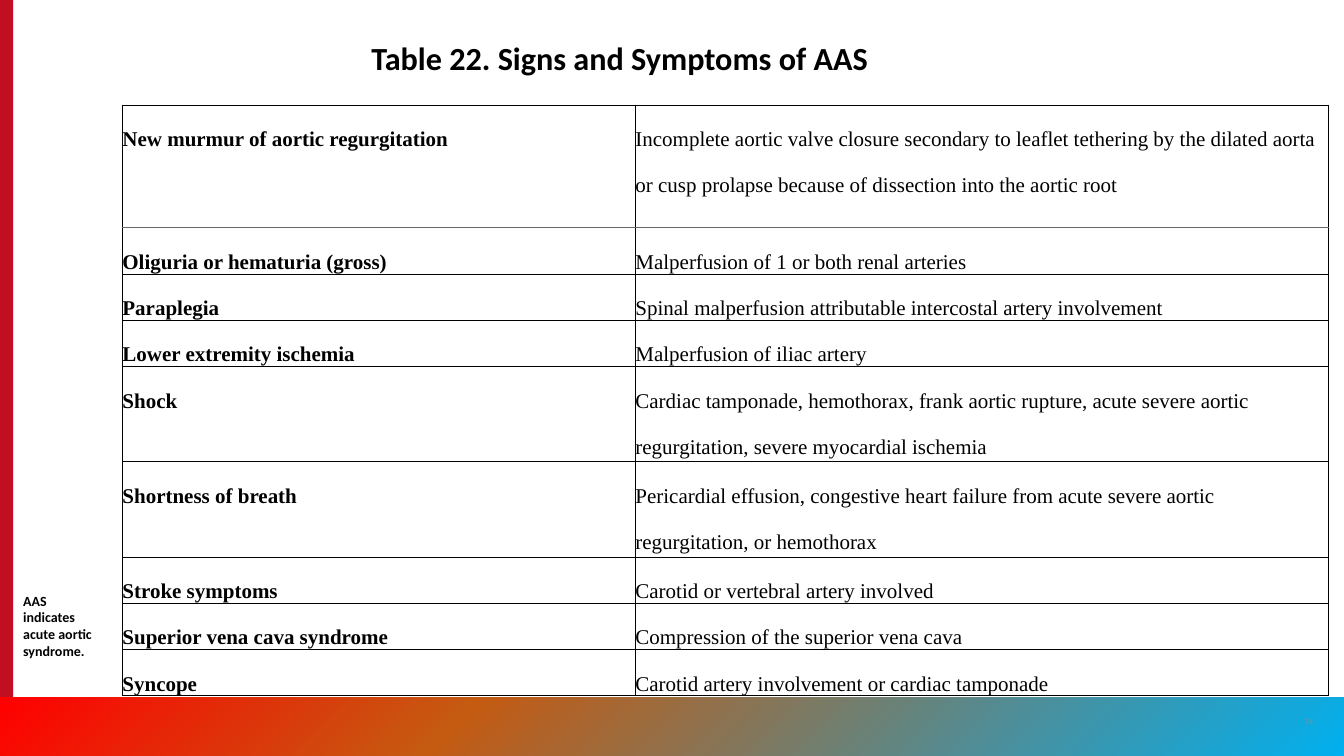
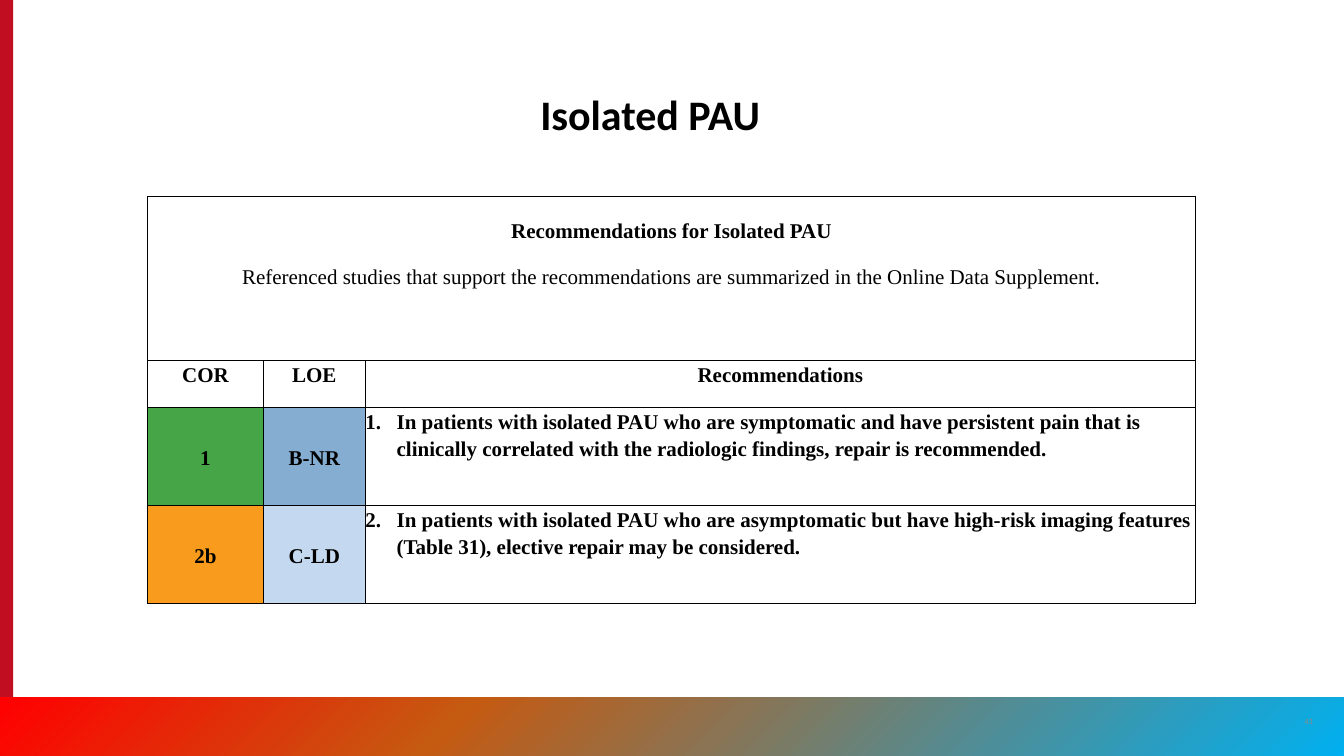
"""Build two slides on aortic guidelines: AAS symptoms and isolated PAU advice."""
from copy import deepcopy
from dataclasses import dataclass
from typing import NamedTuple, Optional

from lxml import etree
from pptx import Presentation, util as u
from pptx.dml.color import RGBColor
from pptx.enum import shapes, text
from pptx.oxml import ns

WIDTH, HEIGHT = u.Inches(26.67), u.Inches(15)
BLACK, RED, GREY, RULE_GREY = "000000", "C10E21", "8A8B8A", "666666"
GREEN, ORANGE, BLUE, PALE_BLUE = "45A547", "F99B1C", "85ADD1", "C4D9F0"
BAND_STOPS = ((0, "00B0F0"), (0.66, "C55A11"), (1, "FF0000"))
HEADING_FONT, TABLE_FONT = "Calibri", "Times New Roman"
TABLE_SIZE = 30
SYMPTOM_PITCH = u.Pt(66)
LEFT, CENTER = text.PP_ALIGN.LEFT, text.PP_ALIGN.CENTER
TOP, MIDDLE = text.MSO_ANCHOR.TOP, text.MSO_ANCHOR.MIDDLE


class Area(NamedTuple):
    left: float
    top: float
    width: float
    height: float


class Line(NamedTuple):
    text: str
    bold: bool = True


@dataclass(frozen=True)
class Cell:
    lines: tuple[Line, ...]
    fill: Optional[str] = None
    align: text.PP_ALIGN = LEFT
    anchor: text.MSO_ANCHOR = TOP
    spacing: float | u.Length = 2
    number: Optional[int] = None
    span: int = 1


@dataclass(frozen=True)
class Grid:
    left: float
    top: float
    columns: tuple[float, ...]
    rows: tuple[float, ...]
    cells: tuple[tuple[Cell, ...], ...]
    divider_after: Optional[int] = None


@dataclass(frozen=True)
class Caption:
    area: Area
    text: str
    size: float
    color: str = BLACK
    bold: bool = True
    wrap: bool = True
    align: text.PP_ALIGN = LEFT
    anchor: text.MSO_ANCHOR = TOP


def across(percent: float) -> int:
    return round(WIDTH * percent / 100)


def down(percent: float) -> int:
    return round(HEIGHT * percent / 100)


def place(area: Area) -> tuple[int, int, int, int]:
    return across(area.left), down(area.top), across(area.width), down(area.height)


def rgb(color: str) -> RGBColor:
    return RGBColor.from_string(color)


def add_run(paragraph, words: str, font: str, size: float, color: str, bold: bool) -> None:
    run = paragraph.add_run()
    run.text = words
    run.font.name = font
    run.font.size = u.Pt(size)
    run.font.bold = bold
    run.font.color.rgb = rgb(color)


def add_block(slide, area: Area):
    block = slide.shapes.add_shape(shapes.MSO_SHAPE.RECTANGLE, *place(area))
    block.shadow.inherit = False
    block.line.fill.background()
    return block


def add_caption(slide, caption: Caption) -> None:
    frame = slide.shapes.add_textbox(*place(caption.area)).text_frame
    frame.margin_left = frame.margin_right = u.Inches(0.08)
    frame.margin_top = frame.margin_bottom = u.Inches(0.08)
    frame.word_wrap = caption.wrap
    frame.auto_size = text.MSO_AUTO_SIZE.SHAPE_TO_FIT_TEXT
    frame.vertical_anchor = caption.anchor
    paragraph = frame.paragraphs[0]
    paragraph.alignment = caption.align
    add_run(paragraph, caption.text, HEADING_FONT, caption.size, caption.color, caption.bold)


def add_frame(slide, page: str) -> None:
    side_bar = add_block(slide, Area(0, 0, 0.97, 100))
    side_bar.fill.solid()
    side_bar.fill.fore_color.rgb = rgb(RED)
    band = add_block(slide, Area(0, 92.2, 100, 7.8))
    band.rotation = 180
    band.fill.gradient()
    band.fill.gradient_angle = 315
    stop_list = band.fill._xPr.find(".//" + ns.qn("a:gsLst"))
    stop_list.append(deepcopy(stop_list[0]))
    for stop, (position, color) in zip(band.fill.gradient_stops, BAND_STOPS):
        stop.position = position
        stop.color.rgb = rgb(color)
    add_caption(slide, Caption(Area(96.7, 94.13, 1.39, 2.4), page, 12, GREY, False,
                               False, CENTER, MIDDLE))


def set_borders(cell, top: tuple[str, float], bottom: tuple[str, float]) -> None:
    properties = cell._tc.get_or_add_tcPr()
    plain = (BLACK, 1)
    sides = {"lnL": plain, "lnR": plain, "lnT": top, "lnB": bottom}
    for index, (side, (color, points)) in enumerate(sides.items()):
        border = etree.Element(ns.qn("a:" + side), w=str(u.Pt(points)))
        solid = etree.SubElement(border, ns.qn("a:solidFill"))
        etree.SubElement(solid, ns.qn("a:srgbClr"), val=color)
        properties.insert(index, border)


def set_number(paragraph, start: int) -> None:
    properties = paragraph._p.get_or_add_pPr()
    indent = u.Inches(0.62)
    properties.set("marL", str(indent))
    properties.set("indent", str(-indent))
    etree.SubElement(properties, ns.qn("a:buAutoNum"), type="arabicPeriod", startAt=str(start))


def write_cell(target, cell: Cell) -> None:
    target.vertical_anchor = cell.anchor
    if cell.fill:
        target.fill.solid()
        target.fill.fore_color.rgb = rgb(cell.fill)
    frame = target.text_frame
    for index, line in enumerate(cell.lines):
        paragraph = frame.add_paragraph() if index else frame.paragraphs[0]
        if cell.number:
            set_number(paragraph, cell.number)
        paragraph.alignment = cell.align
        paragraph.line_spacing = cell.spacing
        add_run(paragraph, line.text, TABLE_FONT, TABLE_SIZE, BLACK, line.bold)


def add_grid(slide, grid: Grid) -> None:
    area = Area(grid.left, grid.top, sum(grid.columns), sum(grid.rows))
    table = slide.shapes.add_table(len(grid.rows), len(grid.columns), *place(area)).table
    table.first_row = table.horz_banding = False
    for column, share in zip(table.columns, grid.columns):
        column.width = across(share)
    for row, share in zip(table.rows, grid.rows):
        row.height = down(share)
    plain, divider = (BLACK, 1), (RULE_GREY, 2)
    for r, row in enumerate(table.rows):
        below = divider if r == grid.divider_after else plain
        above = divider if r - 1 == grid.divider_after else plain
        for target in row.cells:
            target.margin_left = target.margin_right = 0
            target.margin_top = target.margin_bottom = 0
            target.fill.background()
            set_borders(target, above, below)
        for c, cell in enumerate(grid.cells[r]):
            if cell.span > 1:
                table.cell(r, c).merge(table.cell(r, c + cell.span - 1))
            write_cell(table.cell(r, c), cell)


def label(words: str, fill: Optional[str] = None) -> Cell:
    return Cell((Line(words),), fill, CENTER, MIDDLE if fill else TOP, 1.15)


def advice(number: int, words: str) -> Cell:
    return Cell((Line(words),), spacing=1.15, number=number)


def symptom(words: str, bold: bool) -> Cell:
    return Cell((Line(words, bold),), spacing=SYMPTOM_PITCH)


SYMPTOMS = (
    ("New murmur of aortic regurgitation",
     "Incomplete aortic valve closure secondary to leaflet tethering by the dilated aorta "
     "or cusp prolapse because of dissection into the aortic root"),
    ("Oliguria or hematuria (gross)", "Malperfusion of 1 or both renal arteries"),
    ("Paraplegia", "Spinal malperfusion attributable intercostal artery involvement"),
    ("Lower extremity ischemia", "Malperfusion of iliac artery"),
    ("Shock",
     "Cardiac tamponade, hemothorax, frank aortic rupture, acute severe aortic "
     "regurgitation, severe myocardial ischemia"),
    ("Shortness of breath",
     "Pericardial effusion, congestive heart failure from acute severe aortic "
     "regurgitation, or hemothorax"),
    ("Stroke symptoms", "Carotid or vertebral artery involved"),
    ("Superior vena cava syndrome", "Compression of the superior vena cava"),
    ("Syncope", "Carotid artery involvement or cardiac tamponade"),
)
ONE_LINE, TWO_LINES = 5.8, 12.6
SYMPTOM_GRID = Grid(
    9.11, 13.87, (38.17, 51.56),
    (16.27, *[ONE_LINE] * 3, *[TWO_LINES] * 2, *[ONE_LINE] * 3),
    tuple((symptom(sign, True), symptom(cause, False)) for sign, cause in SYMPTOMS),
    divider_after=0,
)
PAU_GRID = Grid(
    10.99, 25.93, (8.59, 7.61, 61.75), (21.73, 6.2, 13, 13),
    (
        (Cell((Line("Recommendations for Isolated PAU"),
               Line("Referenced studies that support the recommendations are summarized "
                    "in the Online Data Supplement.", False)), align=CENTER, span=3),),
        (label("COR"), label("LOE"), label("Recommendations")),
        (label("1", GREEN), label("B-NR", BLUE),
         advice(1, "In patients with isolated PAU who are symptomatic and have persistent "
                   "pain that is clinically correlated with the radiologic findings, "
                   "repair is recommended.")),
        (label("2b", ORANGE), label("C-LD", PALE_BLUE),
         advice(2, "In patients with isolated PAU who are asymptomatic but have high-risk "
                   "imaging features (Table 31), elective repair may be considered.")),
    ),
)
PAGES = (
    ("14", SYMPTOM_GRID, (
        Caption(Area(27.33, 4.6, 45.33, 6.2), "Table 22. Signs and Symptoms of AAS", 46),
        Caption(Area(1.42, 77.8, 6.34, 12.2), "AAS indicates acute aortic syndrome.", 20),
    )),
    ("41", PAU_GRID, (Caption(Area(39.9, 11.13, 20.17, 7.8), "Isolated PAU", 60),)),
)


def main() -> None:
    deck = Presentation()
    deck.slide_width, deck.slide_height = WIDTH, HEIGHT
    for page, grid, captions in PAGES:
        slide = deck.slides.add_slide(deck.slide_layouts[6])
        add_frame(slide, page)
        add_grid(slide, grid)
        for caption in captions:
            add_caption(slide, caption)
    deck.save("out.pptx")


if __name__ == "__main__":
    main()
